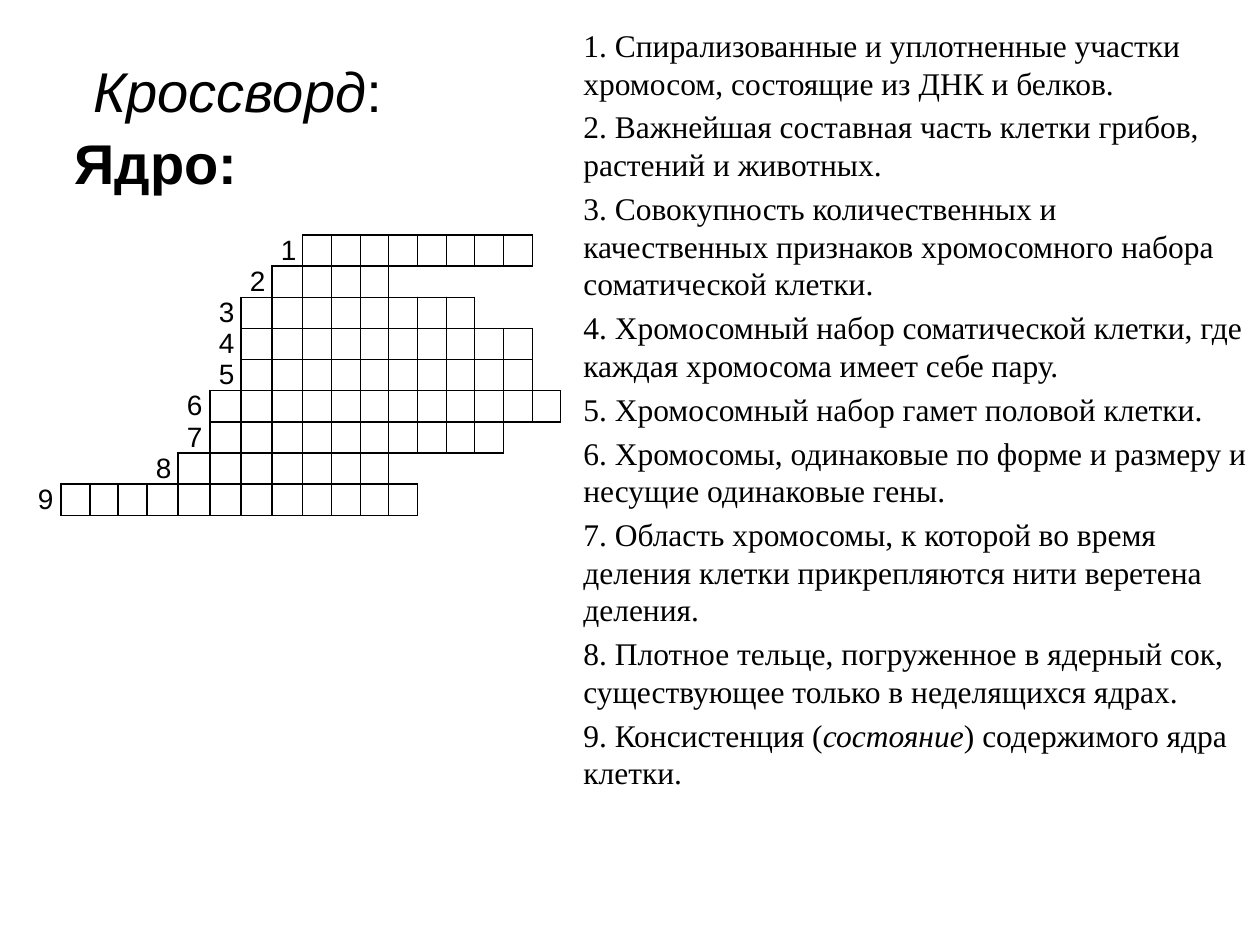
from dataclasses import dataclass

from lxml.etree import SubElement
from pptx import Presentation
from pptx.dml.color import RGBColor
from pptx.enum.text import MSO_ANCHOR as Anchor, MSO_AUTO_SIZE as Fit, PP_ALIGN as Align
from pptx.oxml.ns import qn
from pptx.util import Pt

PX = 914400 // 126
COLORS = {"ink": "000000"}
SANS, SERIF = "Arial", "Times New Roman"


@dataclass
class Run:
    text: str
    bold: bool = False
    italic: bool = False


@dataclass
class Word:
    """A crossword answer: its first column and its number of letters."""
    start: int
    size: int

    def covers(self, col: int) -> bool:
        return self.start <= col < self.start + self.size


WORDS = [Word(9, 8), Word(8, 4), Word(7, 8), Word(7, 10), Word(7, 10),
         Word(6, 12), Word(6, 10), Word(5, 7), Word(1, 12)]
WIDTHS = [32, 29, 28, 29, 31, 32, 31, 31, 31] + [29, 29, 28] * 3
ROW = 31

CLUES = [
    [Run("1. Спирализованные и уплотненные участки хромосом, состоящие из ДНК и белков.")],
    [Run("2. Важнейшая составная часть клетки грибов, растений и животных.")],
    [Run("3. Совокупность количественных и качественных признаков хромосомного набора "
         "соматической клетки.")],
    [Run("4. Хромосомный набор соматической клетки, где каждая хромосома имеет себе пару.")],
    [Run("5. Хромосомный набор гамет половой клетки.")],
    [Run("6. Хромосомы, одинаковые по форме и размеру и несущие одинаковые гены.")],
    [Run("7. Область хромосомы, к которой во время деления клетки прикрепляются нити "
         "веретена деления.")],
    [Run("8. Плотное тельце, погруженное в ядерный сок, существующее только в "
         "неделящихся ядрах.")],
    [Run("9. Консистенция ("), Run("состояние", italic=True), Run(") содержимого ядра клетки.")],
]


def add_runs(para, runs: list[Run], font: str, size: int) -> None:
    for item in runs:
        run = para.add_run()
        run.text = item.text
        run.font.name, run.font.size = font, Pt(size)
        run.font.bold, run.font.italic = item.bold, item.italic
        run.font.color.rgb = RGBColor.from_string(COLORS["ink"])


def fill_frame(frame, paras: list[list[Run]], font: str, size: int, gap: float) -> list:
    frame.word_wrap = True
    frame.auto_size = Fit.NONE
    frame.vertical_anchor = Anchor.TOP
    for i, runs in enumerate(paras):
        para = frame.add_paragraph() if i else frame.paragraphs[0]
        para.alignment = Align.LEFT
        para.space_before = Pt(gap if i else 0)
        add_runs(para, runs, font, size)
    return list(frame.paragraphs)


def place(shape, left: int, top: int, width: int, height: int) -> None:
    shape.left, shape.top = left * PX, top * PX
    shape.width, shape.height = width * PX, height * PX


def in_word(row: int, col: int) -> bool:
    return 0 <= row < len(WORDS) and WORDS[row].covers(col)


def draw_edges(cell, row: int, col: int) -> None:
    """Line each side that touches a letter square, and clear the others."""
    props = cell._tc.get_or_add_tcPr()
    sides = {"L": (row, col - 1), "R": (row, col + 1),
             "T": (row - 1, col), "B": (row + 1, col)}
    for side, near in sides.items():
        line = SubElement(props, qn(f"a:ln{side}"), w=str(Pt(1)))
        if in_word(row, col) or in_word(*near):
            fill = SubElement(line, qn("a:solidFill"))
            SubElement(fill, qn("a:srgbClr"), val=COLORS["ink"])
        else:
            SubElement(line, qn("a:noFill"))


def add_grid(slide, left: int, top: int) -> None:
    table = slide.shapes.add_table(
        len(WORDS), len(WIDTHS), left * PX, top * PX,
        sum(WIDTHS) * PX, len(WORDS) * ROW * PX).table
    table.first_row = table.horz_banding = False
    for col, width in zip(table.columns, WIDTHS):
        col.width = width * PX
    for r, word in enumerate(WORDS):
        table.rows[r].height = ROW * PX
        for c in range(len(WIDTHS)):
            cell = table.cell(r, c)
            cell.margin_left = 9 * PX
            cell.margin_right = cell.margin_top = cell.margin_bottom = 0
            cell.vertical_anchor = Anchor.BOTTOM
            draw_edges(cell, r, c)
            cell.fill.background()
            para = cell.text_frame.paragraphs[0]
            if c == word.start - 1:
                add_runs(para, [Run(str(r + 1))], SANS, 16)
            else:
                SubElement(para._p, qn("a:endParaRPr"), sz="1200")


def add_title(slide) -> None:
    title = slide.shapes.title
    place(title, 0, 29, 1260, 204)
    heads = [[Run("Кроссворд", italic=True), Run(":")], [Run("Ядро:", bold=True)]]
    paras = fill_frame(title.text_frame, heads, SANS, 32, 3)
    title.text_frame.margin_top = 27 * PX
    for para, indent in zip(paras, (81, 62)):
        props = para._p.get_or_add_pPr()
        props.set("marL", "0")
        props.set("indent", str(indent * PX))


def add_clues(slide) -> None:
    box = slide.shapes.add_textbox(0, 0, PX, PX)
    place(box, 571, 20, 689, 830)
    for para in fill_frame(box.text_frame, CLUES, SERIF, 18, 3.6):
        para.line_spacing = Pt(21.5)


def main() -> None:
    deck = Presentation()
    deck.slide_width, deck.slide_height = 1260 * PX, 945 * PX
    slide = deck.slides.add_slide(deck.slide_layouts[5])
    add_title(slide)
    add_grid(slide, 29, 235)
    add_clues(slide)
    deck.save("out.pptx")


if __name__ == "__main__":
    main()
